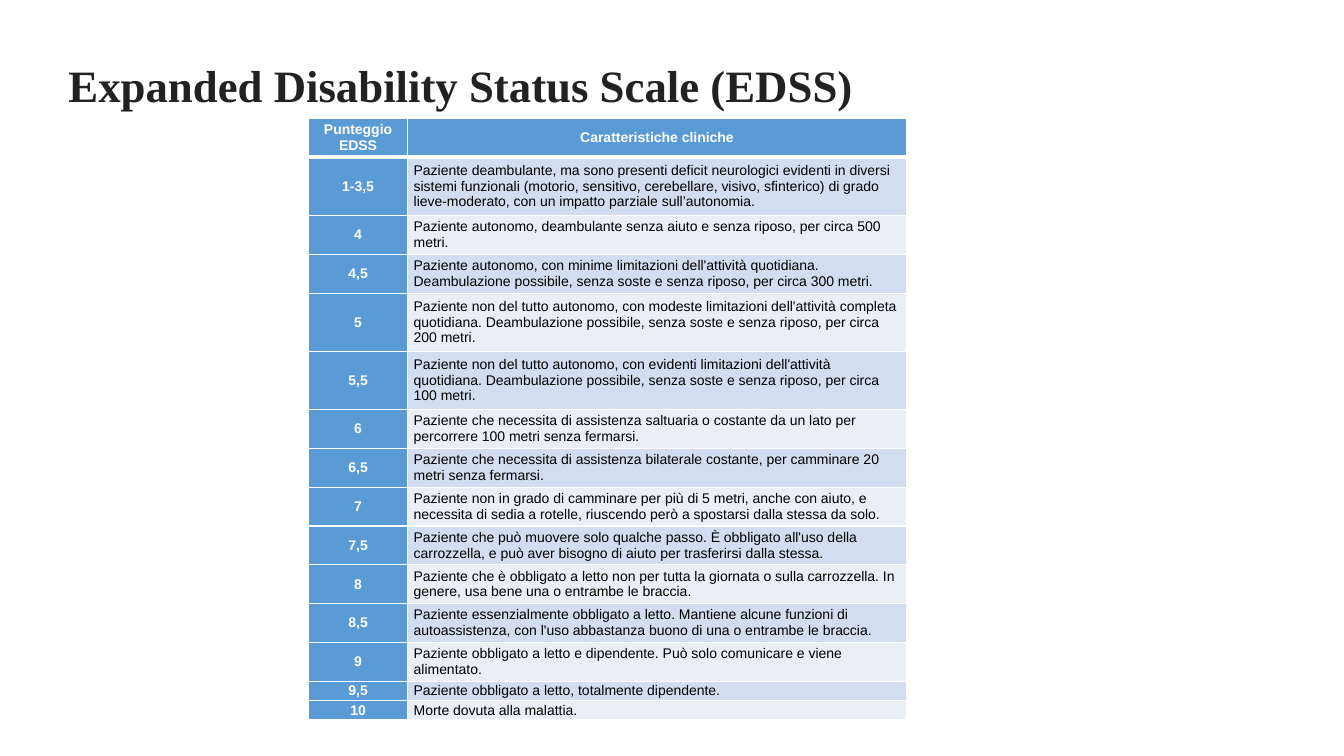
import pptx
import pptx.dml.color
import pptx.enum.text
import pptx.oxml
import pptx.oxml.ns
import pptx.util
from dataclasses import dataclass

Pt = pptx.util.Pt
ALIGN = pptx.enum.text.PP_ALIGN
MIDDLE = pptx.enum.text.MSO_ANCHOR.MIDDLE


@dataclass(frozen=True)
class Theme:
    title_font: str = "Times New Roman"
    table_font: str = "Arial"
    title_size: int = 32
    table_size: int = 10
    title_color: str = "222222"
    accent: str = "5B9BD5"
    bands: tuple = ("D2DEEF", "EAEFF7")
    white: str = "FFFFFF"
    black: str = "000000"


theme = Theme()

HEADER = ("Punteggio EDSS", "Caratteristiche cliniche", 2)
# Score, description, number of text lines the row is tall
SCORES = [
    ("1-3,5", "Paziente deambulante, ma sono presenti deficit neurologici evidenti in diversi sistemi funzionali "
     "(motorio, sensitivo, cerebellare, visivo, sfinterico) di grado lieve-moderato, con un impatto parziale "
     "sull’autonomia.", 3),
    ("4", "Paziente autonomo, deambulante senza aiuto e senza riposo, per circa 500 metri.", 2),
    ("4,5", "Paziente autonomo, con minime limitazioni dell'attività quotidiana. Deambulazione possibile, "
     "senza soste e senza riposo, per circa 300 metri.", 2),
    ("5", "Paziente non del tutto autonomo, con modeste limitazioni dell'attività completa quotidiana. "
     "Deambulazione possibile, senza soste e senza riposo, per circa 200 metri.", 3),
    ("5,5", "Paziente non del tutto autonomo, con evidenti limitazioni dell'attività quotidiana. "
     "Deambulazione possibile, senza soste e senza riposo, per circa 100 metri.", 3),
    ("6", "Paziente che necessita di assistenza saltuaria o costante da un lato per percorrere 100 metri "
     "senza fermarsi.", 2),
    ("6,5", "Paziente che necessita di assistenza bilaterale costante, per camminare 20 metri senza fermarsi.", 2),
    ("7", "Paziente non in grado di camminare per più di 5 metri, anche con aiuto, e necessita di sedia a rotelle, "
     "riuscendo però a spostarsi dalla stessa da solo.", 2),
    ("7,5", "Paziente che può muovere solo qualche passo. È obbligato all'uso della carrozzella, e può aver bisogno "
     "di aiuto per trasferirsi dalla stessa.", 2),
    ("8", "Paziente che è obbligato a letto non per tutta la giornata o sulla carrozzella. In genere, usa bene una "
     "o entrambe le braccia.", 2),
    ("8,5", "Paziente essenzialmente obbligato a letto. Mantiene alcune funzioni di autoassistenza, con l'uso "
     "abbastanza buono di una o entrambe le braccia.", 2),
    ("9", "Paziente obbligato a letto e dipendente. Può solo comunicare e viene alimentato.", 2),
    ("9,5", "Paziente obbligato a letto, totalmente dipendente.", 1),
    ("10", "Morte dovuta alla malattia.", 1),
]
ROWS = [HEADER] + SCORES
COLUMN_WIDTHS = (70.5, 356.5)
LINE_HEIGHT = 13.87


def add_run(paragraph, text, font_name, size, color, bold):
    run = paragraph.add_run()
    run.text = text
    run.font.name = font_name
    run.font.size = Pt(size)
    run.font.bold = bold
    run.font.color.rgb = pptx.dml.color.RGBColor.from_string(color)


def set_borders(cell, bottom_width, top_width):
    """Draw white borders; must run before the fill, which follows them in the XML."""
    properties = cell._tc.get_or_add_tcPr()
    for side, width in (("L", 1), ("R", 1), ("T", top_width), ("B", bottom_width)):
        properties.append(pptx.oxml.parse_xml(
            f'<a:ln{side} {pptx.oxml.ns.nsdecls("a")} w="{Pt(width)}">'
            f'<a:solidFill><a:srgbClr val="{theme.white}"/></a:solidFill></a:ln{side}>'))


presentation = pptx.Presentation()
presentation.slide_width = Pt(960)
presentation.slide_height = Pt(540)
slide = presentation.slides.add_slide(presentation.slide_layouts[6])

title = slide.shapes.add_textbox(Pt(41.8), Pt(39.6), Pt(852.5), Pt(41))
title.text_frame.word_wrap = True
title.text_frame.vertical_anchor = MIDDLE
add_run(title.text_frame.paragraphs[0], "Expanded Disability Status Scale (EDSS)",
        theme.title_font, theme.title_size, theme.title_color, True)

table_height = LINE_HEIGHT * sum(lines for _, _, lines in ROWS)
table = slide.shapes.add_table(len(ROWS), len(COLUMN_WIDTHS), Pt(220.5), Pt(84.6),
                               Pt(sum(COLUMN_WIDTHS)), Pt(table_height)).table
for column, width in zip(table.columns, COLUMN_WIDTHS):
    column.width = Pt(width)

for row_index, (score, description, lines) in enumerate(ROWS):
    table.rows[row_index].height = Pt(LINE_HEIGHT * lines)
    is_header = row_index == 0
    for column_index, text in enumerate((score, description)):
        cell = table.cell(row_index, column_index)
        is_heading = is_header or column_index == 0
        set_borders(cell, 3 if is_header else 1, 3 if row_index == 1 else 1)
        fill_color = theme.accent if is_heading else theme.bands[(row_index - 1) % 2]
        cell.fill.solid()
        cell.fill.fore_color.rgb = pptx.dml.color.RGBColor.from_string(fill_color)
        cell.vertical_anchor = MIDDLE
        cell.margin_left = cell.margin_right = Pt(4.5)
        cell.margin_top = cell.margin_bottom = Pt(0)
        paragraph = cell.text_frame.paragraphs[0]
        paragraph.alignment = ALIGN.CENTER if is_heading else ALIGN.LEFT
        add_run(paragraph, text, theme.table_font, theme.table_size,
                theme.white if is_heading else theme.black, is_heading)

presentation.save("out.pptx")
